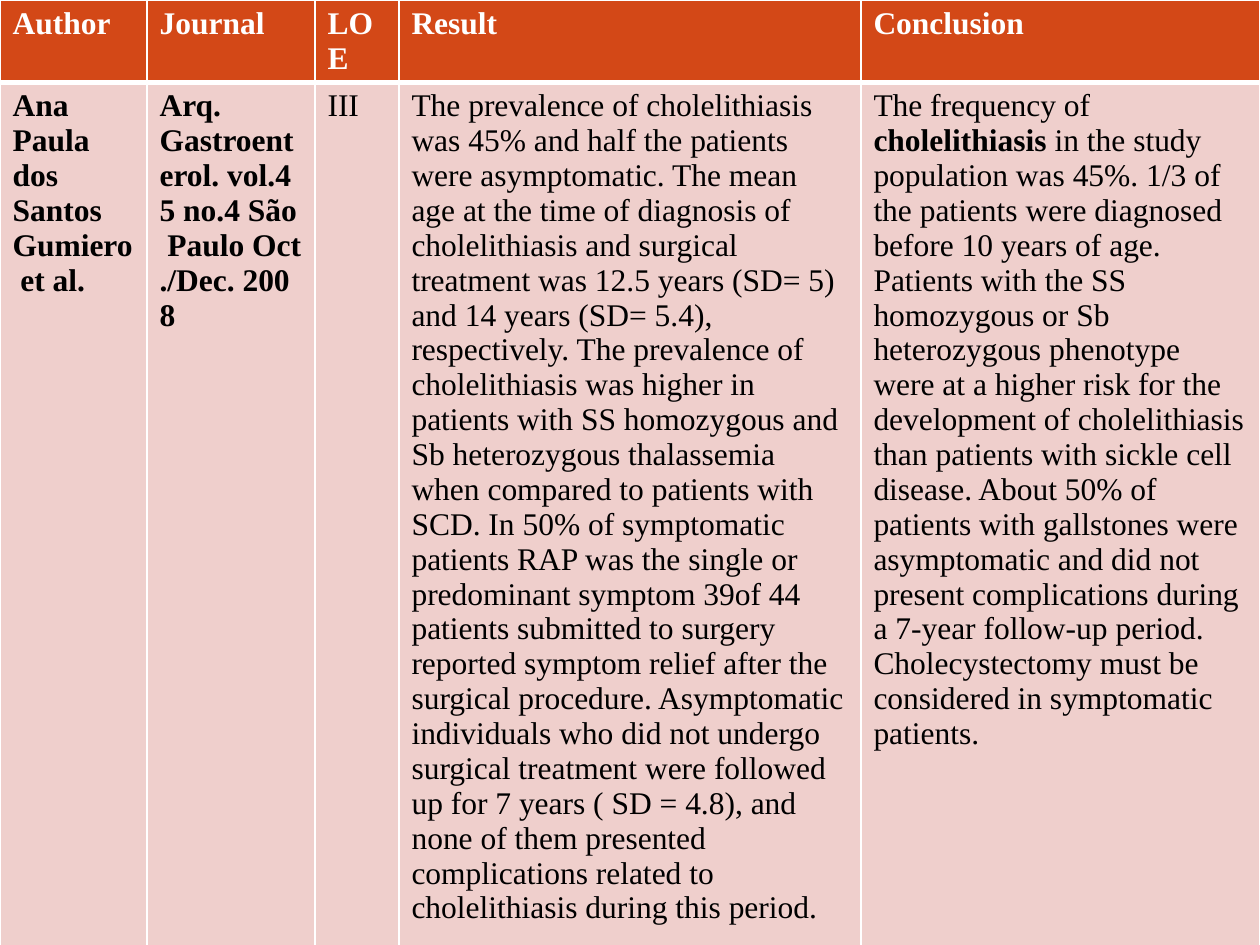
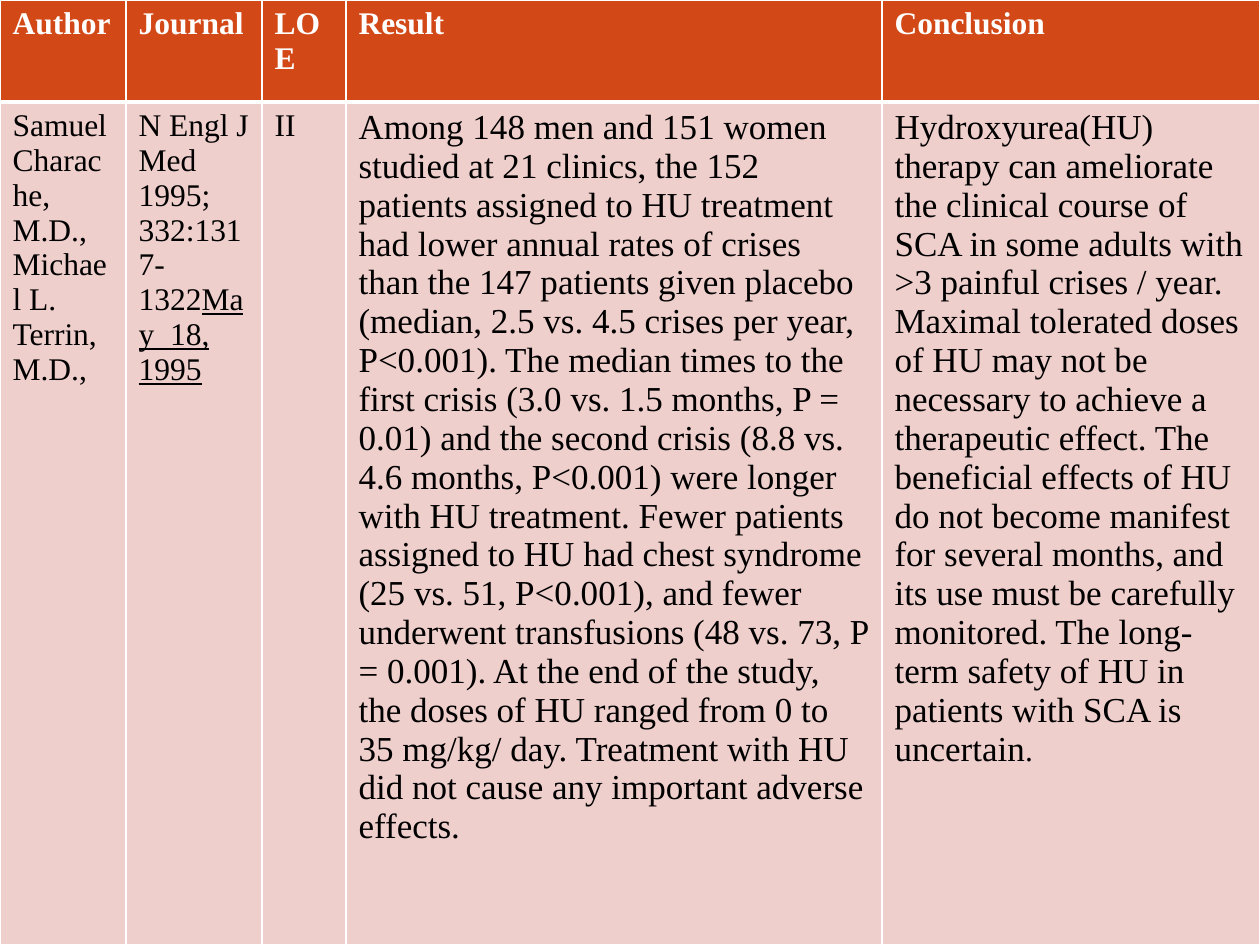
from lxml import etree
from pptx import Presentation, util as u
from pptx.dml.color import RGBColor
from pptx.oxml.ns import qn

PX = u.Inches(1) / 126
WIDE, HIGH = 1260, 945
RUST, ROSE, WHITE, BLACK = "D34817", "EFCFCC", "FFFFFF", "000000"
HEADS = ["Author", "Journal", "LOE", "Result", "Conclusion"]
BASE = {"size": 18, "name": "Times New Roman", "bold": False}
BOLD = {"bold": True}
LARGE = {"size": 20}

GALL = [
    [("Ana Paula dos Santos Gumiero ~et al.", BOLD)],
    [("Arq. Gastroenterol.~vol.45~no.4~São Paulo~Oct./Dec.~2008".replace("São ", "São~"), BOLD)],
    [("III", {})],
    [("The prevalence of cholelithiasis was 45% and half the patients were "
      "asymptomatic. The mean age at the time of diagnosis of cholelithiasis and "
      "surgical treatment was 12.5 years (SD= 5) and 14 years (SD= 5.4), "
      "respectively. The prevalence of cholelithiasis was higher in patients with "
      "SS homozygous and Sb heterozygous thalassemia when compared to patients "
      "with SCD. In 50% of symptomatic patients RAP was the single or predominant "
      "symptom 39of 44 patients submitted to surgery reported symptom relief after "
      "the surgical procedure. Asymptomatic individuals who did not undergo "
      "surgical treatment were followed up for 7 years ( SD = 4.8), and none of "
      "them presented complications related to cholelithiasis during this "
      "period.~", {})],
    [("The frequency of ", {}), ("cholelithiasis", BOLD),
     (" in the study population was 45%. 1/3 of the patients were diagnosed before "
      "10 years of age. Patients with the SS homozygous or Sb heterozygous "
      "phenotype were at a higher risk for the development of cholelithiasis than "
      "patients with sickle cell disease. About 50% of patients with gallstones "
      "were asymptomatic and did not present complications during a 7-year "
      "follow-up period. Cholecystectomy must be considered in symptomatic "
      "patients.", {})],
]

UREA = [
    [("Samuel Charache, M.D., Michael L. Terrin, M.D.,", {})],
    [("N Engl J Med 1995; 332:1317-1322", {}), ("May~ 18, 1995", {"underline": True})],
    [("II", {})],
    [("Among 148 men and 151 women studied at 21 clinics, the 152 patients assigned "
      "to HU treatment had lower annual rates of crises than the 147 patients given "
      "placebo (median, 2.5 vs. 4.5 crises per year, P<0.001). The median times to "
      "the first crisis (3.0 vs. 1.5 months, P = 0.01) and the second crisis (8.8 "
      "vs. 4.6 months, P<0.001) were longer with HU treatment. Fewer patients "
      "assigned to HU had chest syndrome (25 vs. 51, P<0.001), and fewer underwent "
      "transfusions (48 vs. 73, P = 0.001). At the end of the study, the doses of "
      "HU ranged from 0 to 35 mg/kg/ day. Treatment with HU did not cause any "
      "important adverse effects.", LARGE)],
    [("Hydroxyurea(HU) therapy can ameliorate the clinical course of SCA in some "
      "adults with >3 painful crises / year. Maximal tolerated doses of HU may not "
      "be necessary to achieve a therapeutic effect. The beneficial effects of HU "
      "do not become manifest for several months, and its use must be carefully "
      "monitored. The long-term safety of HU in patients with SCA is uncertain",
      LARGE), (".", {})],
]


def px(n):
    """Turn whole px into EMU."""
    return u.Emu(round(n * PX))


def hue(code):
    """Turn a hex string into a colour."""
    return RGBColor.from_string(code)


def write(cell, runs, color):
    """Write formatted runs into a cell; a tilde is a no-break space."""
    para = cell.text_frame.paragraphs[0]
    for words, style in runs:
        run = para.add_run()
        run.text = words.replace("~", chr(160))
        for key, val in {**BASE, **style}.items():
            setattr(run.font, key, u.Pt(val) if key == "size" else val)
        run.font.color.rgb = hue(color)


def edge(cell, sides):
    """Draw white borders, given as side and width in points."""
    props = cell._tc.get_or_add_tcPr()
    for spot, (side, size) in enumerate(sides.items()):
        line = etree.Element(qn("a:ln" + side), w=str(u.Pt(size)))
        fill = etree.SubElement(line, qn("a:solidFill"))
        etree.SubElement(fill, qn("a:srgbClr"), val=WHITE)
        props.insert(spot, line)


def study(deck, cols, rows, facts):
    """Add a slide filled by the table of one study."""
    slide = deck.slides.add_slide(deck.slide_layouts[6])
    frame = slide.shapes.add_table(2, len(cols), 0, 0, px(WIDE), px(HIGH))
    grid = frame.table
    grid.horz_banding = False
    for col, wide in zip(grid.columns, cols):
        col.width = px(wide)
    for row, high in zip(grid.rows, rows):
        row.height = px(high)
    heads = [[(head, BOLD)] for head in HEADS]
    looks = [(heads, RUST, WHITE, 1, 3), (facts, ROSE, BLACK, 3, 1)]
    for row, (texts, back, ink, top, base) in zip(grid.rows, looks):
        for cell, runs in zip(row.cells, texts):
            cell.fill.solid()
            cell.fill.fore_color.rgb = hue(back)
            edge(cell, {"L": 1, "R": 1, "T": top, "B": base})
            write(cell, runs, ink)


def main():
    """Build the deck."""
    deck = Presentation()
    deck.slide_width, deck.slide_height = px(WIDE), px(HIGH)
    study(deck, [147, 168, 84, 462, 399], [82, 863], GALL)
    study(deck, [126, 136, 84, 536, 378], [102, 843], UREA)
    deck.save("out.pptx")


if __name__ == "__main__":
    main()
